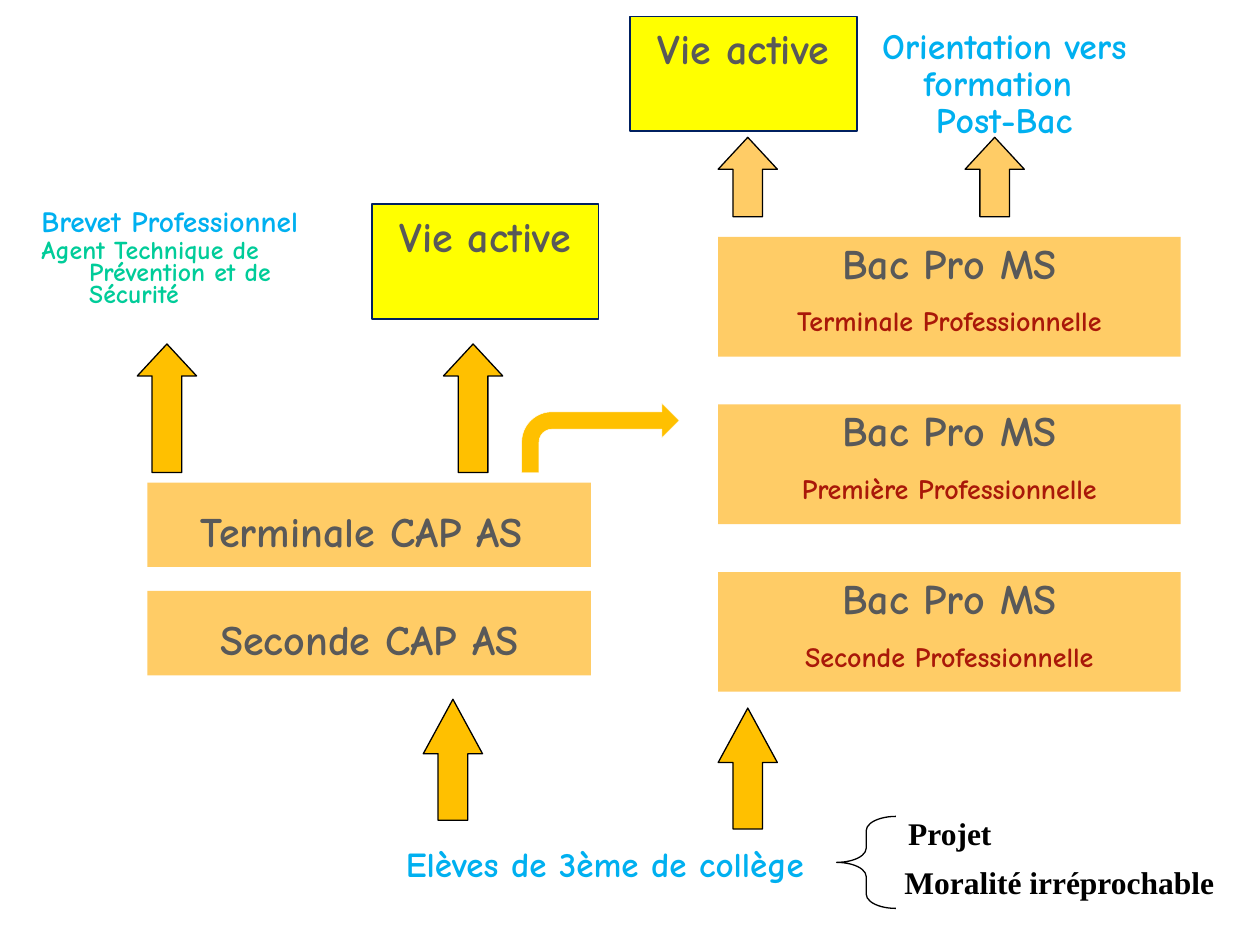
from pptx import Presentation
from pptx.dml.color import RGBColor
from pptx.enum.shapes import MSO_SHAPE as Shape
from pptx.enum.text import MSO_ANCHOR as Anchor, PP_ALIGN as Align
from pptx.util import Inches, Pt

COMIC, SERIF = "Comic Neue", "Times New Roman"
BLUE, GREEN, RED, GREY, BLACK = "00B0F0", "00CC99", "A91809", "595959", "000000"
ORANGE, GOLD, YELLOW, NAVY, WHITE = "FFCC66", "FFC000", "FFFF00", "002060", "FFFFFF"


def rgb(value):
    return RGBColor.from_string(value)


def apply(target, formats):
    for name, value in formats.items():
        setattr(target, name, value)


def add_figure(slide, preset, box, fill=None, line=None, width=0.75, adjust=()):
    figure = slide.shapes.add_shape(preset, *map(Inches, box))
    figure.shadow.inherit = False
    if fill:
        figure.fill.solid()
        figure.fill.fore_color.rgb = rgb(fill)
    else:
        figure.fill.background()
    if line:
        figure.line.color.rgb = rgb(line)
        figure.line.width = Pt(width)
    else:
        figure.line.fill.background()
    for index, value in enumerate(adjust):
        figure.adjustments[index] = value
    return figure


def write(holder, lines, align=Align.CENTER, font=COMIC, top=0.05, wrap=True,
          hanging=0, **spacing):
    """Fill a shape with lines of (text, size, colour, space before)."""
    frame = holder.text_frame
    apply(frame, {"word_wrap": wrap, "vertical_anchor": Anchor.TOP,
                  "margin_top": Inches(top)})
    for index, (text, size, colour, before) in enumerate(lines):
        paragraph = frame.add_paragraph() if index else frame.paragraphs[0]
        apply(paragraph, {"alignment": align, "space_before": Pt(before), **spacing})
        if hanging:
            properties = paragraph._p.get_or_add_pPr()
            properties.set("marL", str(Inches(hanging)))
            properties.set("indent", str(-Inches(hanging)))
        run = paragraph.add_run()
        run.text = text
        apply(run.font, {"name": font, "size": Pt(size), "bold": True})
        run.font.color.rgb = rgb(colour)


def add_label(slide, box, lines, **formats):
    write(slide.shapes.add_textbox(*map(Inches, box)), lines, **formats)


def add_working_life(slide, left, top):
    box = add_figure(slide, Shape.RECTANGLE, (left, top, 1.8, 0.91), YELLOW, NAVY, 1)
    write(box, [("Vie active", 24, GREY, 0)])


def add_up_arrow(slide, left, top, height, fill=GOLD, head=0.54):
    add_figure(slide, Shape.UP_ARROW, (left, top, 0.47, height), fill, BLACK,
               adjust=(0.5, head))


def add_cap_track(slide, left, top):
    for row, level in enumerate(("Terminale CAP AS ", "Seconde CAP AS")):
        step = add_figure(slide, Shape.RECTANGLE,
                          (left, top + row * 0.86, 3.52, 0.67), ORANGE)
        write(step, [(level, 24, GREY, 0)], top=0.18)
    for offset in (-0.08, 2.35):
        add_up_arrow(slide, left + offset, top - 1.1, 1.02)
    add_up_arrow(slide, left + 2.19, top + 1.72, 0.96, head=0.92)
    add_figure(slide, Shape.BENT_ARROW, (left + 2.97, top - 0.63, 1.25, 0.55),
               GOLD, WHITE, 0.25)


def add_bac_track(slide, left, top):
    for row, year in enumerate(("Terminale", "Première", "Seconde")):
        step = add_figure(slide, Shape.RECTANGLE,
                          (left, top + row * 1.33, 3.67, 0.95), ORANGE)
        write(step, [("Bac Pro MS", 24, GREY, 0),
                     (f"{year} Professionnelle", 16, RED, 11)], line_spacing=0.9)
    for offset in (0, 1.96):
        add_up_arrow(slide, left + offset, top - 0.79, 0.63, ORANGE)
    add_up_arrow(slide, left, top + 3.74, 0.96, head=0.92)


def add_further_studies(slide):
    tight = {"hanging": 0.38, "line_spacing": 0.7}
    add_label(slide, (0.23, 1.64, 2.58, 1.09),
              [("Brevet Professionnel", 16.8, BLUE, 3.4),
               ("Agent Technique de Prévention et de Sécurité", 14.7, GREEN, 2.9)],
              align=Align.LEFT, **tight)
    add_label(slide, (6.64, 0.23, 2.66, 1.02),
              [(text, 20.4, BLUE, 4.1)
               for text in ("Orientation vers", "formation ", "Post-Bac")], **tight)


def add_entry(slide, left, top):
    add_label(slide, (left, top + 0.23, 3.75, 0.44),
              [("Elèves de 3ème de collège", 20, BLUE, 10)], align=Align.RIGHT)
    add_figure(slide, Shape.LEFT_BRACE, (left + 3.91, top + 0.07, 0.47, 0.73),
               line=BLACK, adjust=(0.24, 0.5))
    for text, x, y, width in (("Projet", 4.38, 0, 0.87),
                              ("Moralité irréprochable", 4.35, 0.39, 2.69)):
        add_label(slide, (left + x, top + y, width, 0.4), [(text, 18, BLACK, 0)],
                  align=Align.LEFT, font=SERIF, wrap=False)


def main():
    deck = Presentation()
    apply(deck, {"slide_width": Inches(10), "slide_height": Inches(7.5)})
    slide = deck.slides.add_slide(deck.slide_layouts[6])
    add_further_studies(slide)
    add_working_life(slide, 2.95, 1.62)
    add_working_life(slide, 5, 0.13)
    add_cap_track(slide, 1.17, 3.83)
    add_bac_track(slide, 5.7, 1.88)
    add_entry(slide, 2.73, 6.41)
    deck.save("out.pptx")


if __name__ == "__main__":
    main()
